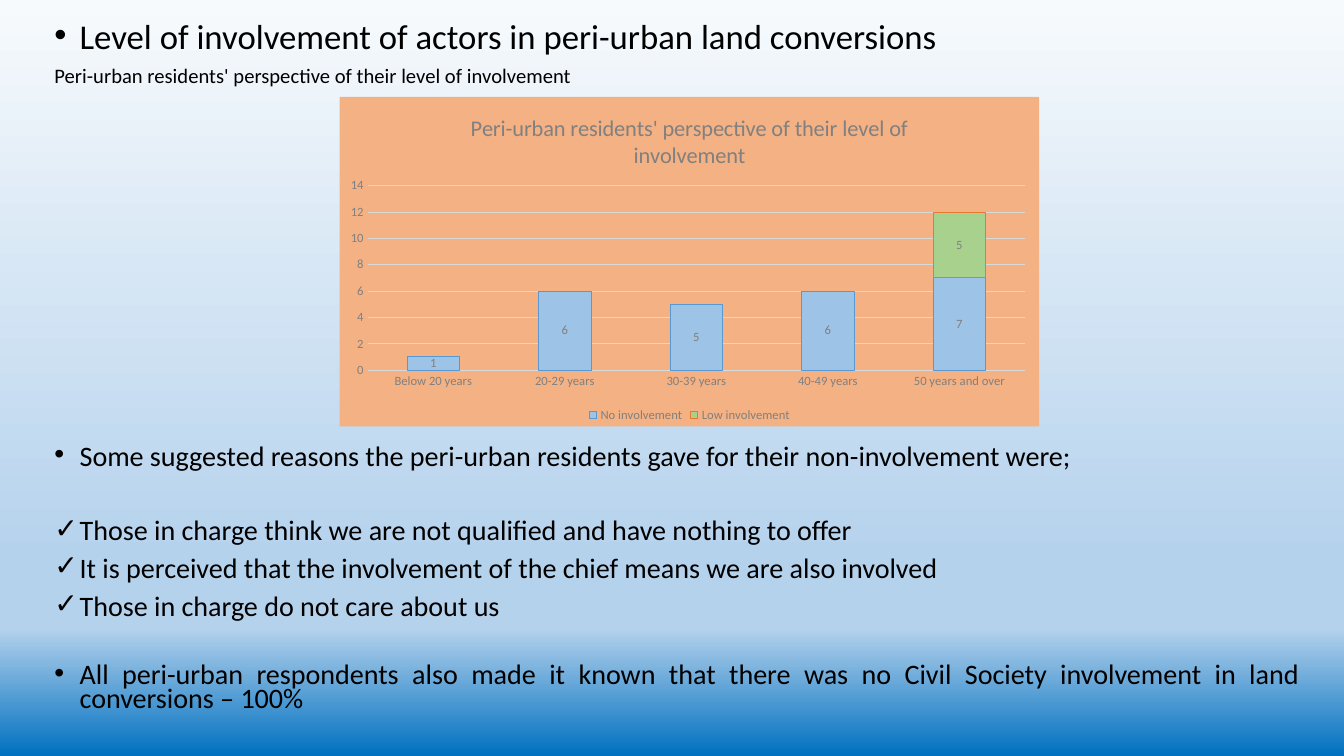
import pptx
import pptx.util
import pptx.oxml
import pptx.oxml.ns
import pptx.dml.color
import pptx.chart.data
import pptx.enum.chart
import pptx.enum.text

Pt = pptx.util.Pt
qn = pptx.oxml.ns.qn
ALIGN = pptx.enum.text.PP_ALIGN
CHART = pptx.enum.chart


def rgb(code):
    return pptx.dml.color.RGBColor.from_string(code)


def apply(item, style):
    for name, value in style.items():
        setattr(item, name, value)


def add_node(parent, tag, **attrs):
    node = parent.makeelement(qn(tag), attrs)
    parent.append(node)
    return node


class Page:
    face = "Calibri"
    ink = "000000"
    grey = "808080"
    rule = "D9D9D9"

    def __init__(self, deck):
        self.slide = deck.slides.add_slide(deck.slide_layouts[1])

    def font(self, font, size, color):
        apply(font, {"name": self.face, "size": Pt(size), "bold": False})
        font.color.rgb = rgb(color)

    def line(self, line, color):
        line.color.rgb = rgb(color)
        line.width = Pt(0.75)

    def back(self, stops):
        fill = self.slide.background.fill
        fill.gradient()
        fill.gradient_angle = 270
        group = self.slide.element.find(".//" + qn("a:gsLst"))
        for old in list(group):
            group.remove(old)
        for place, color in stops:
            stop = add_node(group, "a:gs", pos=str(place * 1000))
            add_node(stop, "a:srgbClr", val=color)

    def body(self, box, rows):
        title = self.slide.shapes.title.element
        title.getparent().remove(title)
        shape = self.slide.placeholders[1]
        apply(shape, dict(zip(("left", "top", "width", "height"), map(Pt, box))))
        frame = shape.text_frame
        apply(frame, {"word_wrap": True,
                      "auto_size": pptx.enum.text.MSO_AUTO_SIZE.NONE,
                      "vertical_anchor": pptx.enum.text.MSO_ANCHOR.TOP})
        for i, row in enumerate(rows):
            para = frame.add_paragraph() if i else frame.paragraphs[0]
            self.para(para, *row)

    def para(self, para, text, mark, size, gap, align):
        apply(para, {"line_spacing": 0.7, "space_before": Pt(gap),
                     "space_after": Pt(0), "alignment": align})
        run = para.add_run()
        run.text = text
        self.font(run.font, size, self.ink)
        props = para._p.get_or_add_pPr()
        hang = Pt(18) if mark else 0
        props.set("marL", str(hang))
        props.set("indent", str(-hang))
        if mark:
            add_node(props, "a:buFont", typeface="Arial")
            add_node(props, "a:buChar", char=mark)
        else:
            add_node(props, "a:buNone")

    def chart(self, box, title, cats, series, fill):
        data = pptx.chart.data.CategoryChartData()
        data.categories = cats
        for name, values, *_ in series:
            data.add_series(name, values)
        chart = self.slide.shapes.add_chart(
            CHART.XL_CHART_TYPE.COLUMN_STACKED, *map(Pt, box), data).chart
        self.font(chart.font, 9, self.grey)

        # Title and legend
        chart.has_title = True
        head = chart.chart_title.text_frame
        head.text = title
        self.font(head.paragraphs[0].runs[0].font, 16, self.grey)
        chart.has_legend = True
        apply(chart.legend, {"position": CHART.XL_LEGEND_POSITION.BOTTOM,
                             "include_in_layout": False})
        self.font(chart.legend.font, 9, self.grey)

        # Axes
        for axis in (chart.category_axis, chart.value_axis):
            apply(axis, {"major_tick_mark": CHART.XL_TICK_MARK.NONE,
                         "minor_tick_mark": CHART.XL_TICK_MARK.NONE})
            self.font(axis.tick_labels.font, 9, self.grey)
        self.line(chart.category_axis.format.line, self.rule)
        axis = chart.value_axis
        apply(axis, {"minimum_scale": 0, "maximum_scale": 14,
                     "major_unit": 2, "has_major_gridlines": True})
        axis.format.line.fill.background()
        self.line(axis.major_gridlines.format.line, self.rule)

        # Bars and labels
        plot = chart.plots[0]
        apply(plot, {"gap_width": 150, "overlap": 100,
                     "vary_by_categories": False, "has_data_labels": True})
        apply(plot.data_labels, {"show_value": True,
                                 "position": CHART.XL_LABEL_POSITION.CENTER})
        self.font(plot.data_labels.font, 9, self.grey)
        for bars, (_, _, color, edge) in zip(plot.series, series):
            bars.format.fill.solid()
            bars.format.fill.fore_color.rgb = rgb(color)
            self.line(bars.format.line, edge)
        self.area(chart, fill)

    def area(self, chart, fill):
        # Plot position inside the chart
        plot = chart._chartSpace.find(".//" + qn("c:plotArea"))
        old = plot.find(qn("c:layout"))
        if old is not None:
            plot.remove(old)
        layout = plot.makeelement(qn("c:layout"), {})
        plot.insert(0, layout)
        manual = add_node(layout, "c:manualLayout")
        for key, value in (("layoutTarget", "inner"), ("xMode", "edge"),
                           ("yMode", "edge"), ("x", "0.04"), ("y", "0.27"),
                           ("w", "0.94"), ("h", "0.56")):
            add_node(manual, "c:" + key, val=value)
        # Chart background
        space = chart._chartSpace
        props = space.makeelement(qn("c:spPr"), {})
        space.find(qn("c:chart")).addnext(props)
        add_node(add_node(props, "a:solidFill"), "a:srgbClr", val=fill)
        add_node(add_node(props, "a:ln"), "a:noFill")


def main():
    deck = pptx.Presentation()
    apply(deck, {"slide_width": Pt(960), "slide_height": Pt(540)})
    page = Page(deck)
    page.back([(0, "F7FAFD"), (74, "B5D2EC"), (83, "B5D2EC"), (100, "0070C0")])

    # Text: wording, bullet, size, space before, alignment
    topic = "Peri-urban residents' perspective of their level of involvement"
    left, just = ALIGN.LEFT, ALIGN.JUSTIFY
    page.body((31.7, 15.1, 903.6, 505.4), [
        ("Level of involvement of actors in peri-urban land conversions",
         "•", 24.8, 10, left),
        (topic, None, 14.7, 10, left),
        ("Some suggested reasons the peri-urban residents gave for their "
         "non-involvement were;", "•", 20.1, 257.5, just),
        ("Those in charge think we are not qualified and have nothing to offer",
         "✓", 20.1, 36.5, just),
        ("It is perceived that the involvement of the chief means we are also "
         "involved", "✓", 20.1, 10, just),
        ("Those in charge do not care about us", "✓", 20.1, 10, just),
        ("All peri-urban respondents also made it known that there was no Civil "
         "Society involvement in land conversions – 100%",
         "•", 20.1, 32, just),
    ])

    # Chart
    page.chart(
        (242.6, 69.1, 499.7, 235.4), topic,
        ["Below 20 years", "20-29 years", "30-39 years", "40-49 years",
         "50 years and over"],
        [("No involvement", (1, 6, 5, 6, 7), "9DC3E6", "5998D0"),
         ("Low involvement", (None, None, None, None, 5), "A9D18E", "E87A30")],
        "F4B183")
    deck.save("out.pptx")


if __name__ == "__main__":
    main()
